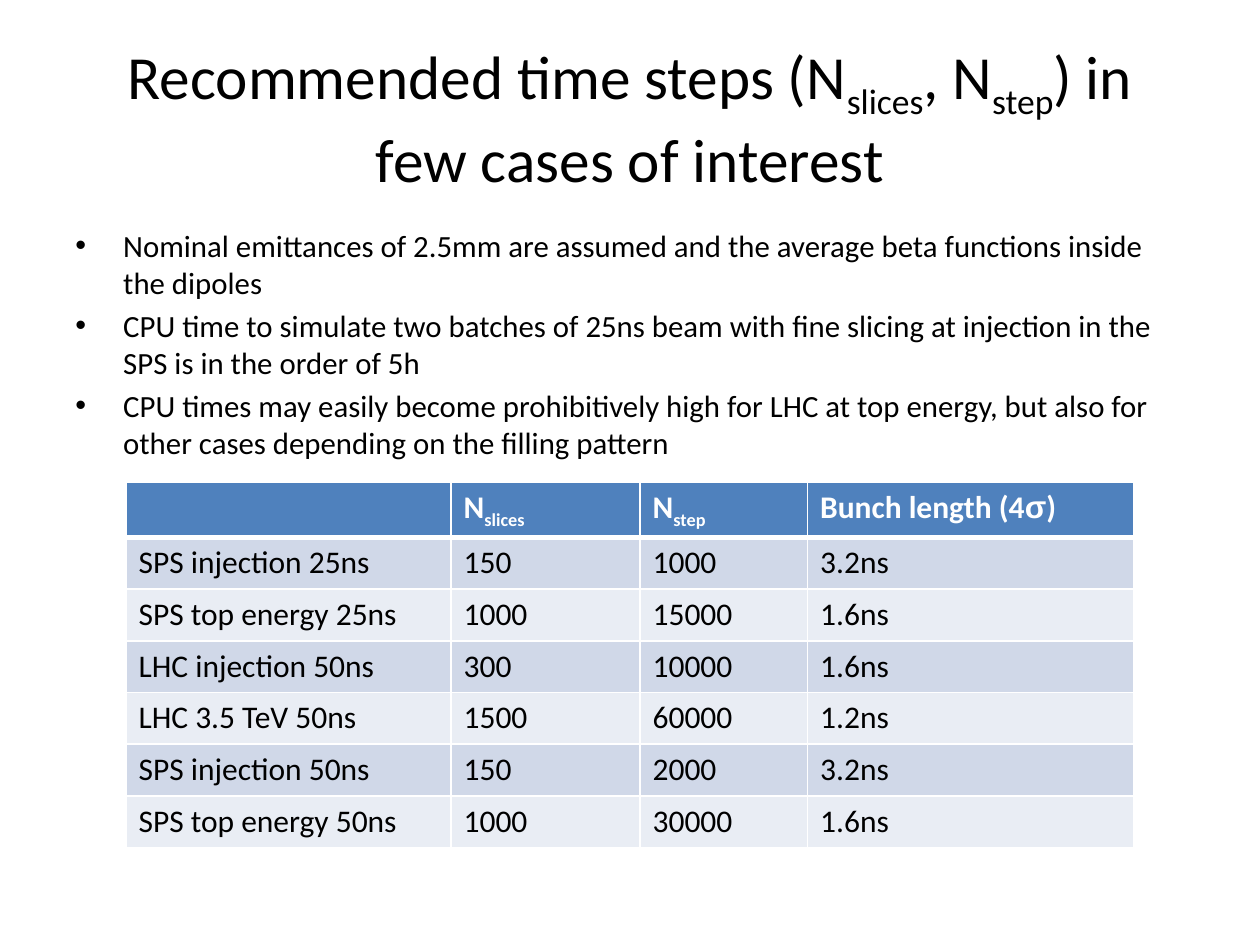
"""Build a slide of recommended time steps with a title, bullets and a table."""
from lxml import etree
from pptx import Presentation, util as u
from pptx.dml.color import RGBColor
from pptx.enum import text
from pptx.oxml import ns

COLORS = {"ink": "000000", "paper": "FFFFFF", "header": "4F81BD",
          "odd": "D0D8E8", "even": "E9EDF4"}
TITLE = [("Recommended time steps (N", ""), ("slices", "sub"), (", N", ""),
         ("step", "sub"), (") in few cases of interest", "")]
BULLETS = [
    "Nominal emittances of 2.5mm are assumed and the average beta functions inside the dipoles",
    "CPU time to simulate two batches of 25ns beam with fine slicing at injection in the SPS is in the order of 5h",
    "CPU times may easily become prohibitively high for LHC at top energy, but also for other cases depending on the filling pattern",
]
HEADER = [
    [],
    [("N", ""), ("slices", "sub")],
    [("N", ""), ("step", "sub")],
    [("Bunch length (4", ""), ("σ", "greek"), (")", "")],
]
CASES = [
    ("SPS injection 25ns", "150", "1000", "3.2ns"),
    ("SPS top energy 25ns", "1000", "15000", "1.6ns"),
    ("LHC injection 50ns", "300", "10000", "1.6ns"),
    ("LHC 3.5 TeV 50ns", "1500", "60000", "1.2ns"),
    ("SPS injection 50ns", "150", "2000", "3.2ns"),
    ("SPS top energy 50ns", "1000", "30000", "1.6ns"),
]
COLUMN_WIDTHS = [2.58, 1.5, 1.33, 2.59]
ROW_HEIGHT = 0.41


def write_runs(paragraph, pieces, size, color, bold=False):
    for content, style in pieces:
        run = paragraph.add_run()
        run.text = content
        run.font.size = u.Pt(size)
        run.font.name = "Arial" if style == "greek" else "Calibri"
        run.font.bold = bold
        run.font.color.rgb = RGBColor.from_string(COLORS[color])
        if style == "sub":
            run._r.get_or_add_rPr().set("baseline", "-25000")


def add_border(properties, side, points):
    line = etree.SubElement(properties, ns.qn(f"a:{side}"), w=str(u.Pt(points)))
    fill = etree.SubElement(line, ns.qn("a:solidFill"))
    etree.SubElement(fill, ns.qn("a:srgbClr"), val=COLORS["paper"])


presentation = Presentation()
presentation.slide_width = u.Inches(10)
presentation.slide_height = u.Inches(7.5)
width, height = presentation.slide_width, presentation.slide_height
slide = presentation.slides.add_slide(presentation.slide_layouts[6])

margin = int(width * 0.05)
title = slide.shapes.add_textbox(margin, int(height * 0.04), width - 2 * margin, u.Inches(1.25))
title_frame = title.text_frame
title_frame.word_wrap = True
title_frame.margin_left = title_frame.margin_right = u.Inches(0.15)
title_frame.vertical_anchor = text.MSO_ANCHOR.MIDDLE
title_frame.paragraphs[0].alignment = text.PP_ALIGN.CENTER
write_runs(title_frame.paragraphs[0], TITLE, 35, "ink")

table_shape = slide.shapes.add_table(
    len(CASES) + 1, len(COLUMN_WIDTHS), int(width * 0.1), int(height * 0.51),
    int(width * 0.8), u.Inches(ROW_HEIGHT * (len(CASES) + 1)))
table = table_shape.table
for column, column_width in zip(table.columns, COLUMN_WIDTHS):
    column.width = u.Inches(column_width)
rows = [HEADER] + [[[(value, "")] for value in case] for case in CASES]
for row_index, row in enumerate(rows):
    table.rows[row_index].height = u.Inches(ROW_HEIGHT)
    is_header = row_index == 0
    band = "header" if is_header else ("odd" if row_index % 2 else "even")
    for column_index, pieces in enumerate(row):
        cell = table.cell(row_index, column_index)
        write_runs(cell.text_frame.paragraphs[0], pieces, 18,
                   "paper" if is_header else "ink", is_header)
        properties = cell._tc.get_or_add_tcPr()
        for side in ("lnL", "lnR", "lnT", "lnB"):
            thick = (is_header and side == "lnB") or (row_index == 1 and side == "lnT")
            add_border(properties, side, 3 if thick else 1)
        cell.fill.solid()
        cell.fill.fore_color.rgb = RGBColor.from_string(COLORS[band])

body = slide.shapes.add_textbox(margin, u.Inches(1.75), width - 2 * margin, u.Inches(1.75))
body_frame = body.text_frame
body_frame.word_wrap = True
for index, bullet in enumerate(BULLETS):
    paragraph = body_frame.add_paragraph() if index else body_frame.paragraphs[0]
    paragraph.space_before = u.Pt(3.5)
    write_runs(paragraph, [(bullet, "")], 17.6, "ink")
    properties = paragraph._p.get_or_add_pPr()
    properties.set("marL", str(u.Inches(0.38)))
    properties.set("indent", str(u.Inches(-0.38)))
    etree.SubElement(properties, ns.qn("a:buFont"), typeface="Arial")
    etree.SubElement(properties, ns.qn("a:buChar"), char="•")

presentation.save("out.pptx")
